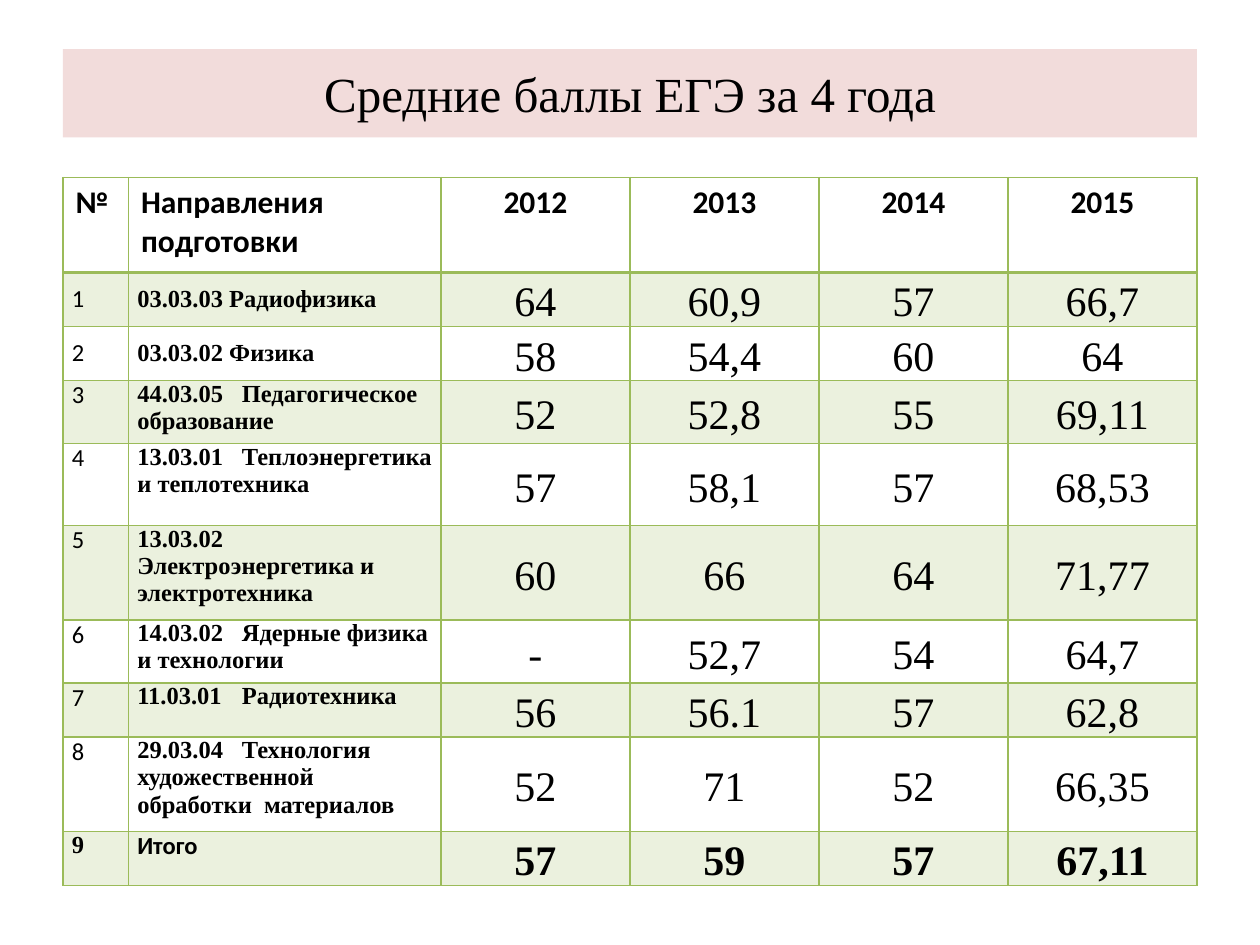
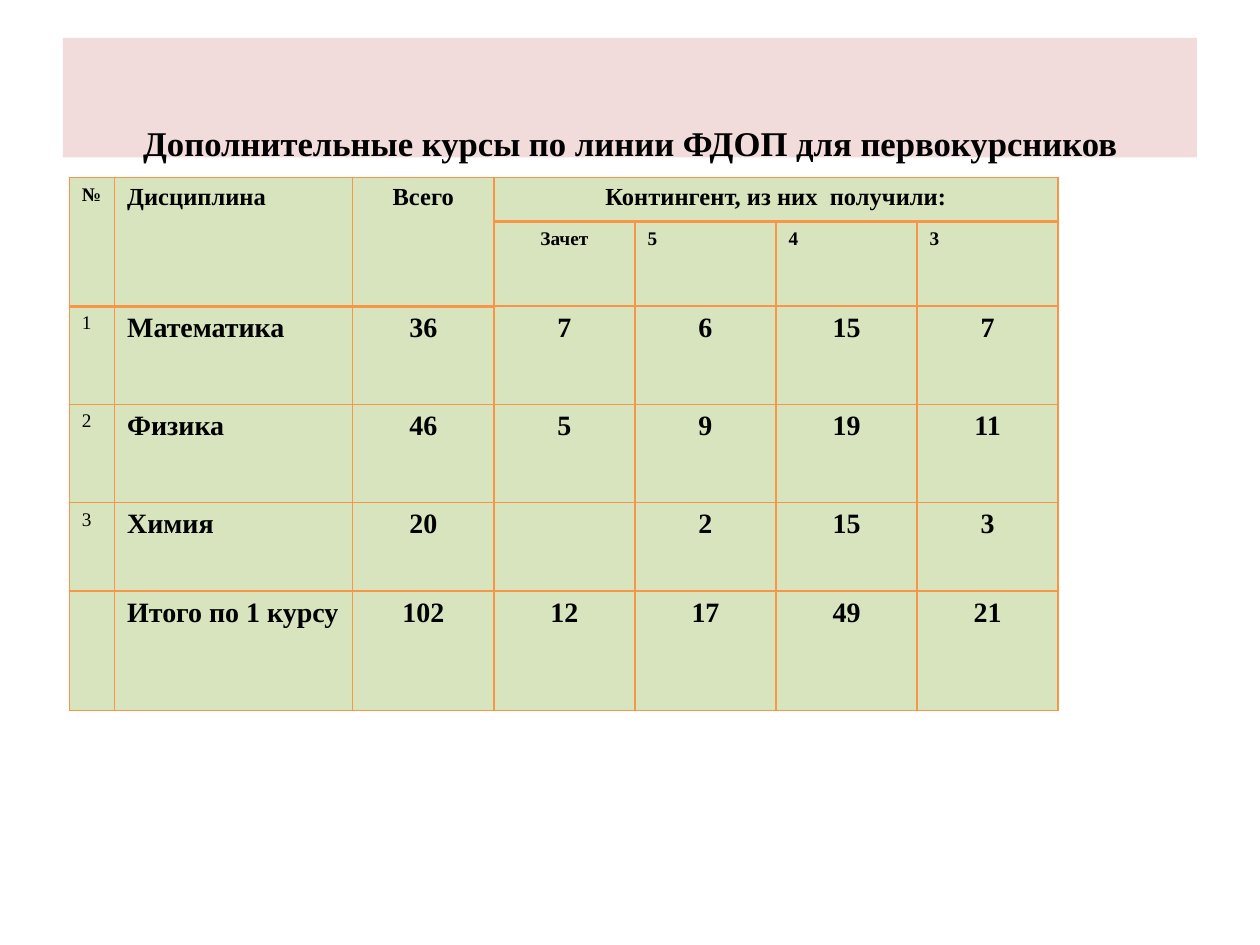
from lxml import etree
from pptx import Presentation
from pptx.dml.color import RGBColor
from pptx.enum.shapes import MSO_SHAPE as Shape
from pptx.enum.text import MSO_ANCHOR as Anchor, PP_ALIGN as Align
from pptx.oxml.ns import qn
from pptx.util import Inches, Pt

COLORS = {
    "text": "000000",
    "title_band": "F2DCDB",
    "score_line": "9BBB59",
    "score_stripe": "EBF1DE",
    "course_line": "F79646",
    "course_fill": "D7E4BD",
}
SERIF, SANS = "Times New Roman", "Calibri"


def write(frame, text, size=14, font=SERIF, bold=False, align=Align.LEFT,
          line_spacing=None, space_after=None, tab=None):
    """Put one formatted paragraph into a text frame."""
    frame.word_wrap = True
    para = frame.paragraphs[0]
    para.alignment = align
    if line_spacing:
        para.line_spacing = line_spacing
    if space_after:
        para.space_after = Pt(space_after)
    if tab:
        stops = etree.SubElement(para._p.get_or_add_pPr(), qn("a:tabLst"))
        etree.SubElement(stops, qn("a:tab"), pos=str(Inches(tab)), algn="l")
    span = para.add_run()
    span.text = text
    span.font.name = font
    span.font.size = Pt(size)
    span.font.bold = bold
    span.font.color.rgb = RGBColor.from_string(COLORS["text"])


def add_grid(page, left, top, widths, heights, line, header_depths):
    """Add a bordered table with a thick rule under each column's header rows."""
    frame = page.shapes.add_table(
        len(heights), len(widths), Inches(left), Inches(top),
        Inches(sum(widths)), Inches(sum(heights)))
    table = frame.table
    table.first_row = table.horz_banding = False
    for column, width in zip(table.columns, widths):
        column.width = Inches(width)
    for row, height in zip(table.rows, heights):
        row.height = Inches(height)
    for r in range(len(heights)):
        for c, depth in enumerate(header_depths):
            props = table.cell(r, c)._tc.get_or_add_tcPr()
            edges = {"L": 1, "R": 1, "T": 2 if r == depth else 1,
                     "B": 2 if r < depth else 1}
            for side, weight in edges.items():
                edge = etree.SubElement(props, qn(f"a:ln{side}"), w=str(Pt(weight)))
                paint = etree.SubElement(edge, qn("a:solidFill"))
                etree.SubElement(paint, qn("a:srgbClr"), val=COLORS[line])
    return table


deck = Presentation()
deck.slide_width, deck.slide_height = Inches(10), Inches(7.5)

# Pages with their title bands
titles = [
    ("Средние баллы ЕГЭ за 4 года", 0.39, 0.7, Anchor.MIDDLE, 0.05,
     dict(size=28)),
    ("Дополнительные курсы по линии ФДОП для первокурсников", 0.3, 0.95,
     Anchor.TOP, 0.67, dict(size=19.8, bold=True)),
]
pages = []
for title, top, height, anchor, inset, style in titles:
    page = deck.slides.add_slide(deck.slide_layouts[6])
    band = page.shapes.add_shape(
        Shape.RECTANGLE, Inches(0.5), Inches(top), Inches(9), Inches(height))
    band.shadow.inherit = False
    band.fill.solid()
    band.fill.fore_color.rgb = RGBColor.from_string(COLORS["title_band"])
    band.line.fill.background()
    band.text_frame.vertical_anchor = anchor
    band.text_frame.margin_top = Inches(inset)
    band.text_frame.margin_bottom = Inches(0 if anchor == Anchor.TOP else 0.05)
    write(band.text_frame, title, align=Align.CENTER, **style)
    pages.append(page)
scores_page, courses_page = pages

# Average exam scores by field of study
scores = [
    ("№", "Направления подготовки", "2012", "2013", "2014", "2015"),
    ("1", "03.03.03 Радиофизика", "64", "60,9", "57", "66,7"),
    ("2", "03.03.02 Физика", "58", "54,4", "60", "64"),
    ("3", "44.03.05\tПедагогическое образование", "52", "52,8", "55", "69,11"),
    ("4", "13.03.01\tТеплоэнергетика и теплотехника", "57", "58,1", "57", "68,53"),
    ("5", "13.03.02\tЭлектроэнергетика и электротехника", "60", "66", "64", "71,77"),
    ("6", "14.03.02\tЯдерные физика и технологии", "-", "52,7", "54", "64,7"),
    ("7", "11.03.01\tРадиотехника", "56", "56.1", "57", "62,8"),
    ("8", "29.03.04\tТехнология художественной обработки  материалов",
     "52", "71", "52", "66,35"),
    ("9", "Итого", "57", "59", "57", "67,11"),
]
score_heights = [0.75, 0.43, 0.43, 0.5, 0.65, 0.75, 0.5, 0.43, 0.75, 0.43]
score_table = add_grid(scores_page, 0.5, 1.41, [0.52, 2.48] + [1.5] * 4,
                       score_heights, "score_line", [1] * 6)
total_row = len(scores) - 1
for r, record in enumerate(scores):
    for c, text in enumerate(record):
        cell = score_table.cell(r, c)
        is_score, is_total = c >= 2, r == total_row
        if r % 2:
            cell.fill.solid()
            cell.fill.fore_color.rgb = RGBColor.from_string(COLORS["score_stripe"])
        else:
            cell.fill.background()
        if r == 0:
            write(cell.text_frame, text, size=18, font=SANS, bold=True,
                  align=Align.CENTER if is_score else Align.LEFT)
            continue
        cell.margin_left = cell.margin_right = Inches(0.05 if is_score else 0.07)
        cell.margin_top = cell.margin_bottom = 0
        if r <= 2 or (is_score and not is_total):
            cell.vertical_anchor = Anchor.MIDDLE
        if is_score:
            write(cell.text_frame, text, size=24, bold=is_total,
                  align=Align.CENTER, line_spacing=1.15, space_after=10)
        else:
            sans = (c == 0) != is_total
            write(cell.text_frame, text, font=SANS if sans else SERIF,
                  bold=c == 1 or is_total, tab=0.83 if "\t" in text else None)

# Results of the additional courses
courses = [
    ("№", "Дисциплина", "Всего", "Контингент, из них  получили:", "", "", ""),
    ("", "", "", "Зачет", "5", "4", "3"),
    ("1", "Математика", "36", "7", "6", "15", "7"),
    ("2", "Физика", "46", "5", "9", "19", "11"),
    ("3", "Химия", "20", "", "2", "15", "3"),
    ("", "Итого по 1 курсу", "102", "12", "17", "49", "21"),
]
course_table = add_grid(courses_page, 0.55, 1.41, [0.36, 1.89] + [1.12] * 5,
                        [0.35, 0.67, 0.78, 0.78, 0.7, 0.95],
                        "course_line", [2] * 3 + [1] * 4)
for c in range(3):
    course_table.cell(0, c).merge(course_table.cell(1, c))
course_table.cell(0, 3).merge(course_table.cell(0, 6))
for r, record in enumerate(courses):
    for c, text in enumerate(record):
        cell = course_table.cell(r, c)
        cell.fill.solid()
        cell.fill.fore_color.rgb = RGBColor.from_string(COLORS["course_fill"])
        if not text:
            continue
        is_grade = r == 1 and c >= 4
        if c == 0 or r == 1:
            size = 11
        else:
            size = 14 if r == 0 else 16
        write(cell.text_frame, text, size=size, bold=c > 0 or r == 0,
              align=Align.LEFT if c < 2 or is_grade else Align.CENTER)

deck.save("out.pptx")
